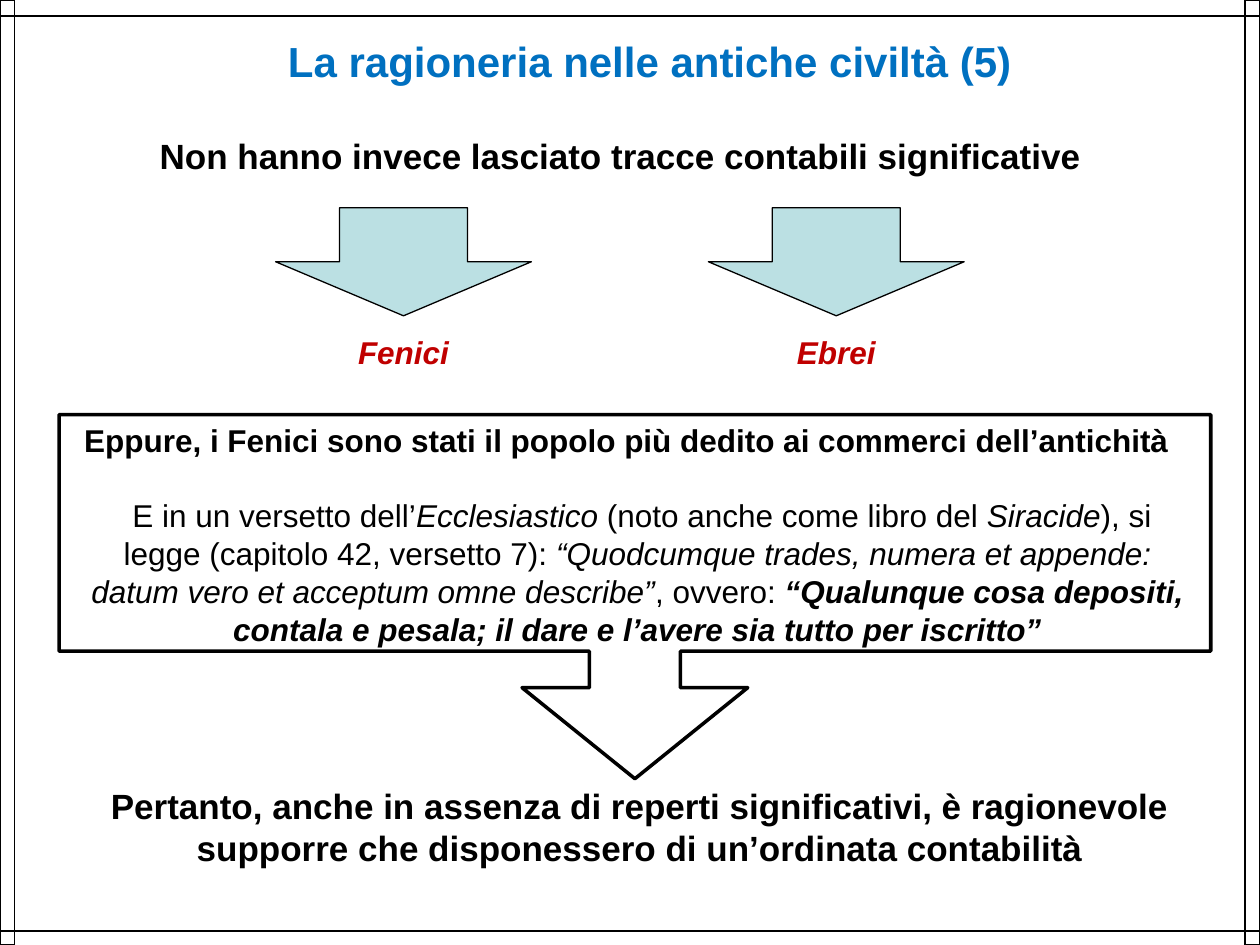
from dataclasses import dataclass

from pptx import Presentation
from pptx import util as u
from pptx.dml.color import RGBColor
from pptx.enum import shapes, text
from pptx.oxml.ns import qn

Pt = u.Pt
Kind = shapes.MSO_SHAPE
Left, Mid = text.PP_ALIGN.LEFT, text.PP_ALIGN.CENTER


@dataclass(frozen=True)
class Theme:
    face: str = "Arial"
    ink: str = "000000"
    blue: str = "0070C0"
    red: str = "C00000"
    aqua: str = "BBE0E3"
    head: int = 24
    lead: int = 20
    body: int = 18
    thin: float = 0.75
    thick: float = 2


class Page:
    def __init__(self, slide, theme):
        self.slide = slide
        self.theme = theme

    def stroke(self, line, width):
        line.color.rgb = RGBColor.from_string(self.theme.ink)
        line.width = Pt(width)

    def rule(self, x1, y1, x2, y2):
        line = self.slide.shapes.add_connector(
            shapes.MSO_CONNECTOR.STRAIGHT, Pt(x1), Pt(y1), Pt(x2), Pt(y2))
        self.stroke(line.line, self.theme.thin)
        props = line._element.spPr
        props.append(props.makeelement(qn("a:effectLst"), {}))

    def shape(self, kind, box, fill=None, width=None, adjust=()):
        item = self.slide.shapes.add_shape(kind, *map(Pt, box))
        item.shadow.inherit = False
        if fill:
            item.fill.solid()
            item.fill.fore_color.rgb = RGBColor.from_string(fill)
        else:
            item.fill.background()
        self.stroke(item.line, width or self.theme.thin)
        for index, value in enumerate(adjust):
            item.adjustments[index] = value

    def text(self, box, paras, size, color=None, wrap=True):
        frame = self.slide.shapes.add_textbox(*map(Pt, box)).text_frame
        frame.word_wrap = wrap
        frame.auto_size = text.MSO_AUTO_SIZE.SHAPE_TO_FIT_TEXT
        for index, (align, gap, runs) in enumerate(paras):
            para = frame.add_paragraph() if index else frame.paragraphs[0]
            para.alignment = align
            if gap:
                para.space_before = Pt(gap)
            for words, style in runs:
                run = para.add_run()
                run.text = words
                form = {"name": self.theme.face, "size": Pt(size),
                        "bold": "b" in style, "italic": "i" in style}
                for key, value in form.items():
                    setattr(run.font, key, value)
                run.font.color.rgb = RGBColor.from_string(color or self.theme.ink)


def main():
    deck = Presentation()
    wide, high = 720, 540
    deck.slide_width, deck.slide_height = Pt(wide), Pt(high)
    theme = Theme()
    page = Page(deck.slides.add_slide(deck.slide_layouts[6]), theme)

    edge = 8.5
    for x in (0, wide - edge):
        page.shape(Kind.RECTANGLE, (x, 0, edge, high))
    for y in (9.2, 532):
        page.rule(0, y, wide, y)

    page.text((157.5, 16.8, 432, 36.7),
              [(Left, 0, [("La ragioneria nelle antiche civiltà (5)", "b")])],
              theme.head, theme.blue, wrap=False)
    page.text((84.2, 73.4, 546, 31.7),
              [(Left, 0, [("Non hanno invece lasciato tracce contabili significative", "b")])],
              theme.lead)

    for x, name in ((157.5, "Fenici"), (404.8, "Ebrei")):
        page.shape(Kind.DOWN_ARROW, (x, 118.7, 146.2, 61.8), theme.aqua)
        page.text((x, 186.5, 146.2, 28.8), [(Mid, 0, [(name, "bi")])],
                  theme.body, theme.red)

    claim = [("Eppure, i Fenici sono stati il popolo più dedito ai commerci dell’antichità", "b")]
    verse = [
        (" E in un versetto dell’", ""),
        ("Ecclesiastico ", "i"),
        ("(noto anche come libro del ", ""),
        ("Siracide", "i"),
        ("), si legge (capitolo 42, versetto 7): ", ""),
        ("“Quodcumque trades, numera et appende: datum vero et acceptum omne describe”", "i"),
        (", ovvero: ", ""),
        ("“Qualunque cosa depositi, contala e pesala; il dare e l’avere sia tutto per iscritto”", "bi"),
    ]
    page.text((41, 236.9, 646.6, 138.2),
              [(Left, 0, claim), (Mid, 21.6, verse)], theme.body)
    page.shape(Kind.DOWN_ARROW_CALLOUT, (33.8, 236.9, 658.1, 208.1),
               width=theme.thick, adjust=(0.25, 0.31, 0.25, 0.65))

    end = ("Pertanto, anche in assenza di reperti significativi, è ragionevole "
           "supporre che disponessero di un’ordinata contabilità")
    page.text((33.8, 445, 663.8, 55.4), [(Mid, 0, [(end, "b")])], theme.lead)

    deck.save("out.pptx")


if __name__ == "__main__":
    main()
